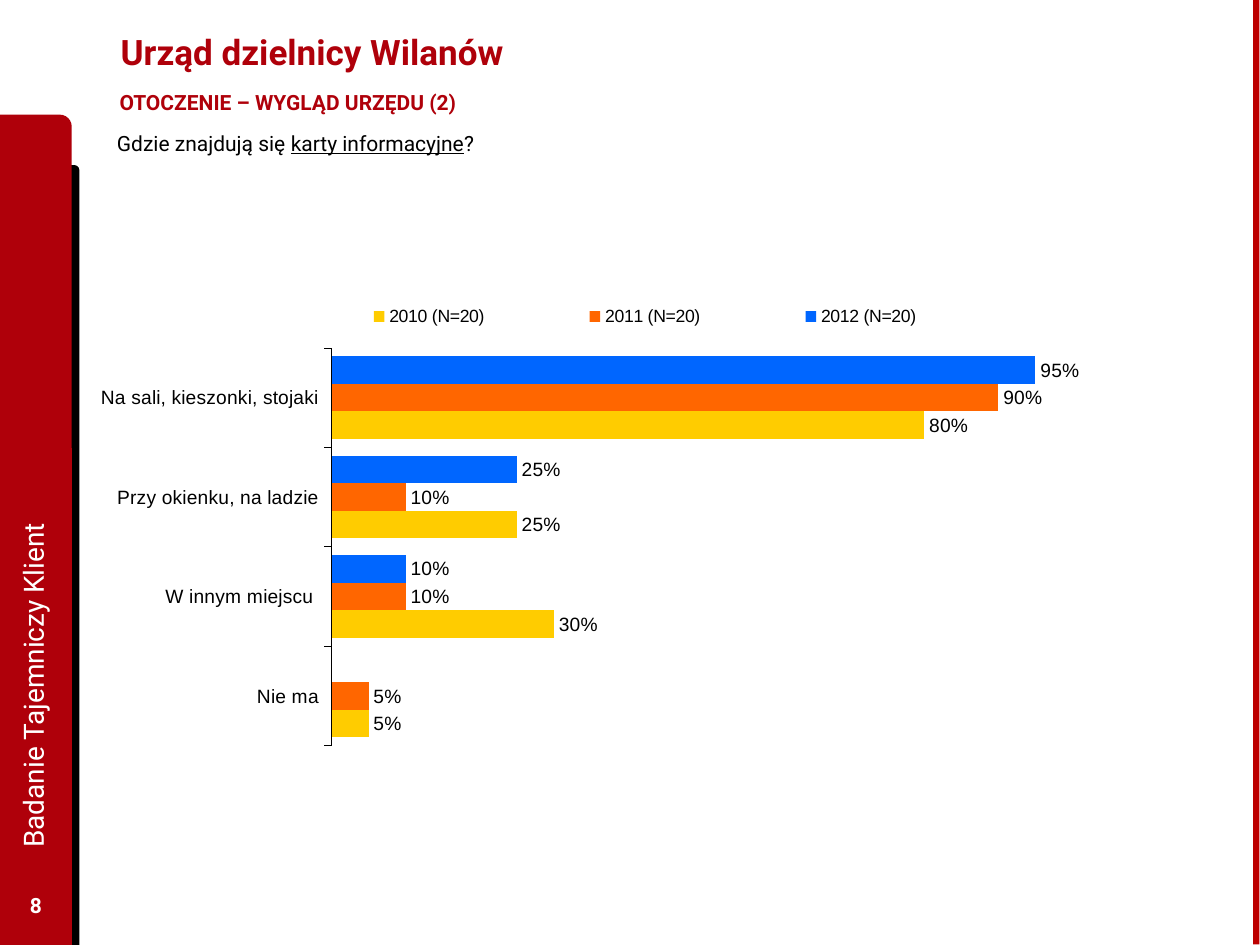
"""Build the Wilanów district office slide with its clustered bar chart."""
from lxml.etree import SubElement
from pptx import Presentation
from pptx.chart.data import CategoryChartData
from pptx.dml.color import RGBColor
from pptx.enum.chart import XL_CHART_TYPE, XL_LABEL_POSITION, XL_LEGEND_POSITION, XL_TICK_MARK
from pptx.enum.shapes import MSO_SHAPE
from pptx.enum.text import MSO_ANCHOR, PP_ALIGN
from pptx.oxml.ns import qn
from pptx.util import Inches, Pt

COLORS = {
    "black": "000000", "white": "FFFFFF", "red": "AF000A", "stripe": "BD0000",
    "blue": "0066FF", "orange": "FF6600", "yellow": "FFCC00",
}


def style_font(font, color, **values):
    for name, value in values.items():
        setattr(font, name, value)
    font.color.rgb = RGBColor.from_string(COLORS[color])


def set_layout(element, position, **fractions):
    for old in element.findall(qn("c:layout")):
        element.remove(old)
    layout = SubElement(element, qn("c:layout"))
    element.insert(position, layout)
    manual = SubElement(layout, qn("c:manualLayout"))
    for name, value in fractions.items():
        SubElement(manual, qn(f"c:{name}")).set("val", str(value))


deck = Presentation()
deck.slide_width, deck.slide_height = Inches(10), Inches(7.5)
page = deck.slides.add_slide(deck.slide_layouts[6])

panels = [
    (MSO_SHAPE.ROUND_1_RECTANGLE, (0.39, 1.31, 0.24, 6.19), 0, "black"),
    (MSO_SHAPE.ROUND_1_RECTANGLE, (0, 0.91, 0.57, 6.59), 0, "red"),
    (MSO_SHAPE.RECTANGLE, (6.22, 3.72, 7.5, 0.05), 90, "stripe"),
]
for kind, place, rotation, color in panels:
    panel = page.shapes.add_shape(kind, *map(Inches, place))
    panel.rotation = rotation
    panel.shadow.inherit = False
    panel.fill.solid()
    panel.fill.fore_color.rgb = RGBColor.from_string(COLORS[color])
    panel.line.fill.background()

middle, top = MSO_ANCHOR.MIDDLE, MSO_ANCHOR.TOP
left, center = PP_ALIGN.LEFT, PP_ALIGN.CENTER
texts = [
    ((0.86, 0.05, 7.77, 0.72), 0, middle, left, 0.1, 20, True, "red",
     ["Urząd dzielnicy Wilanów"]),
    ((-2.62, 3.69, 5.76, 0.51), 270, middle, left, 0.1, 16, False, "white",
     ["Badanie Tajemniczy Klient"]),
    ((0, 6.98, 0.57, 0.4), 0, middle, center, 0.1, 12, True, "white", ["8"]),
    ((0.75, 0.66, 3.85, 0.33), 0, top, left, 0.2, 12, True, "red",
     ["OTOCZENIE – WYGLĄD URZĘDU (2)"]),
    ((0.83, 0.99, 6.15, 0.3), 0, top, left, 0.1, 12, False, "black",
     ["Gdzie znajdują się ", "karty informacyjne", "?"]),
]
for place, rotation, anchor, align, inset, size, bold, color, parts in texts:
    box = page.shapes.add_textbox(*map(Inches, place))
    box.rotation = rotation
    frame = box.text_frame
    frame.word_wrap = True
    frame.vertical_anchor = anchor
    frame.margin_left = frame.margin_right = Inches(inset)
    para = frame.paragraphs[0]
    para.alignment = align
    for index, part in enumerate(parts):
        span = para.add_run()
        span.text = part
        style_font(span.font, color, name="Roboto", size=Pt(size), bold=bold,
                   underline=index == 1)

results = [
    ("2012 (N=20)", "blue", (0.95, 0.25, 0.1, None)),
    ("2011 (N=20)", "orange", (0.9, 0.1, 0.1, 0.05)),
    ("2010 (N=20)", "yellow", (0.8, 0.25, 0.3, 0.05)),
]
data = CategoryChartData(number_format="0%")
data.categories = ["Na sali, kieszonki, stojaki", "Przy okienku, na ladzie",
                   "W innym miejscu ", "Nie ma"]
for name, color, values in results:
    data.add_series(name, values)
chart = page.shapes.add_chart(
    XL_CHART_TYPE.BAR_CLUSTERED, *map(Inches, (0.8, 2.37, 9.07, 3.55)), data).chart
chart.has_title = False
style_font(chart.font, "black", name="Arial", size=Pt(11))

plot = chart.plots[0]
plot.gap_width, plot.overlap, plot.vary_by_categories = 60, 0, False
for series, (name, color, values) in zip(plot.series, results):
    series.format.fill.solid()
    series.format.fill.fore_color.rgb = RGBColor.from_string(COLORS[color])
    labels = series.data_labels
    labels.show_value = True
    labels.number_format, labels.number_format_is_linked = "0%", False
    labels.position = XL_LABEL_POSITION.OUTSIDE_END
    style_font(labels.font, "black", name="Arial", size=Pt(11))

categories = chart.category_axis
categories.reverse_order = True
categories.major_tick_mark = XL_TICK_MARK.OUTSIDE
categories.format.line.width = Pt(0.25)
categories.format.line.color.rgb = RGBColor.from_string(COLORS["black"])
style_font(categories.tick_labels.font, "black", name="Arial", size=Pt(11))

scale = chart.value_axis
scale.minimum_scale, scale.maximum_scale = 0, 1
scale.has_major_gridlines = False
scale.visible = False

chart.has_legend = True
legend = chart.legend
legend.position = XL_LEGEND_POSITION.TOP
legend.include_in_layout = False
style_font(legend.font, "black", name="Arial", size=Pt(10.1))

set_layout(chart.element.find(".//" + qn("c:plotArea")), 0, layoutTarget="inner",
           xMode="edge", yMode="edge", x=0.2, y=0.11, w=0.65, h=0.89)
set_layout(chart.element.find(".//" + qn("c:legend")), 1,
           xMode="edge", yMode="edge", x=0.15, y=0.01, w=0.65, h=0.06)

deck.save("out.pptx")
